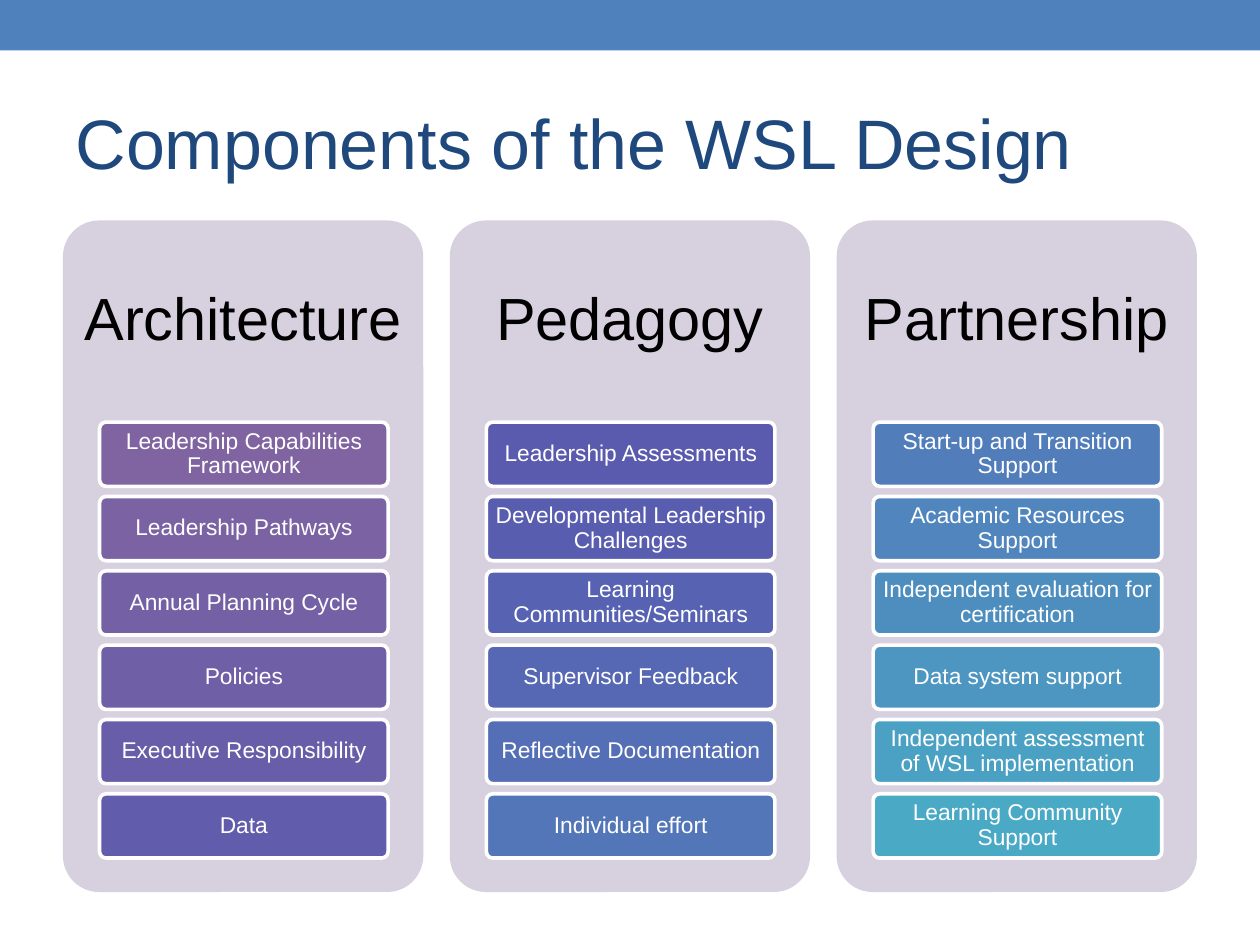
import pptx
import pptx.util
import pptx.dml.color
import pptx.enum.shapes
import pptx.enum.text

Inches = pptx.util.Inches
RGBColor = pptx.dml.color.RGBColor
SHAPE = pptx.enum.shapes.MSO_SHAPE
ALIGN = pptx.enum.text.PP_ALIGN
BLUE = RGBColor(0x4F, 0x81, 0xBD)
NAVY = RGBColor(0x1F, 0x49, 0x7D)
LILAC = RGBColor(0xD7, 0xD1, 0xDF)
BLACK = RGBColor(0, 0, 0)
WHITE = RGBColor(0xFF, 0xFF, 0xFF)
RAMP = [RGBColor.from_string(code) for code in (
    "8064A2 7A62A3 7460A5 6F5FA7 685DA9 625CAC "
    "5A5AAE 595DB0 5763B2 5668B4 546FB6 5376B9 "
    "517EBB 5085BD 4E8EBF 4D96C1 4BA1C3 4AA9C5").split()]

PILLARS = {
    "Architecture": [
        "Leadership Capabilities Framework", "Leadership Pathways",
        "Annual Planning Cycle", "Policies",
        "Executive Responsibility", "Data"],
    "Pedagogy": [
        "Leadership Assessments", "Developmental Leadership Challenges",
        "Learning Communities/Seminars", "Supervisor Feedback",
        "Reflective Documentation", "Individual effort"],
    "Partnership": [
        "Start-up and Transition Support", "Academic Resources Support",
        "Independent evaluation for certification", "Data system support",
        "Independent assessment of WSL implementation",
        "Learning Community Support"],
}


def add_block(kind, left, top, width, height, fill):
    block = slide.shapes.add_shape(
        kind, Inches(left), Inches(top), Inches(width), Inches(height))
    block.shadow.inherit = False
    block.fill.solid()
    block.fill.fore_color.rgb = fill
    block.line.fill.background()
    if kind == SHAPE.ROUNDED_RECTANGLE:
        block.adjustments[0] = 0.1
    return block


def set_text(shape, text, size, color, align, space, side, edge):
    """Write one paragraph, with side and edge as the insets in inches."""
    frame = shape.text_frame
    frame.text = text
    look = {
        "word_wrap": True,
        "auto_size": pptx.enum.text.MSO_AUTO_SIZE.NONE,
        "vertical_anchor": pptx.enum.text.MSO_ANCHOR.MIDDLE,
        "margin_left": Inches(side), "margin_right": Inches(side),
        "margin_top": Inches(edge), "margin_bottom": Inches(edge),
    }
    for name, value in look.items():
        setattr(frame, name, value)
    para = frame.paragraphs[0]
    para.alignment = align
    para.line_spacing = space
    font = para.runs[0].font
    font.name = "Arial"
    font.size = pptx.util.Pt(size)
    font.color.rgb = color


deck = pptx.Presentation()
deck.slide_width = Inches(10)
deck.slide_height = Inches(7.5)
slide = deck.slides.add_slide(deck.slide_layouts[5])

title = slide.shapes.title
place = {"left": 0.5, "top": 0.58, "width": 9, "height": 1.08}
for name, value in place.items():
    setattr(title, name, Inches(value))
set_text(title, "Components of the WSL Design", 40, NAVY, ALIGN.LEFT, 1.0, 0.1, 0.05)

band = add_block(SHAPE.RECTANGLE, 0, 0, 10, 0.4, BLUE)
title.element.addprevious(band.element)

shades = iter(RAMP)
for col, (head, items) in enumerate(PILLARS.items()):
    left = 0.5 + 3.07 * col
    add_block(SHAPE.ROUNDED_RECTANGLE, left, 1.75, 2.86, 5.33, LILAC)
    label = slide.shapes.add_textbox(
        Inches(left), Inches(1.75), Inches(2.86), Inches(1.6))
    set_text(label, head, 34, BLACK, ALIGN.CENTER, 0.9, 0.14, 0.14)

    for row, item in enumerate(items):
        box = add_block(SHAPE.ROUNDED_RECTANGLE, left + 0.29, 3.35 + 0.59 * row,
                        2.29, 0.51, next(shades))
        box.line.color.rgb = WHITE
        box.line.width = pptx.util.Pt(2.08)
        set_text(box, item, 13, WHITE, ALIGN.CENTER, 0.9, 0.04, 0.03)

deck.save("out.pptx")
